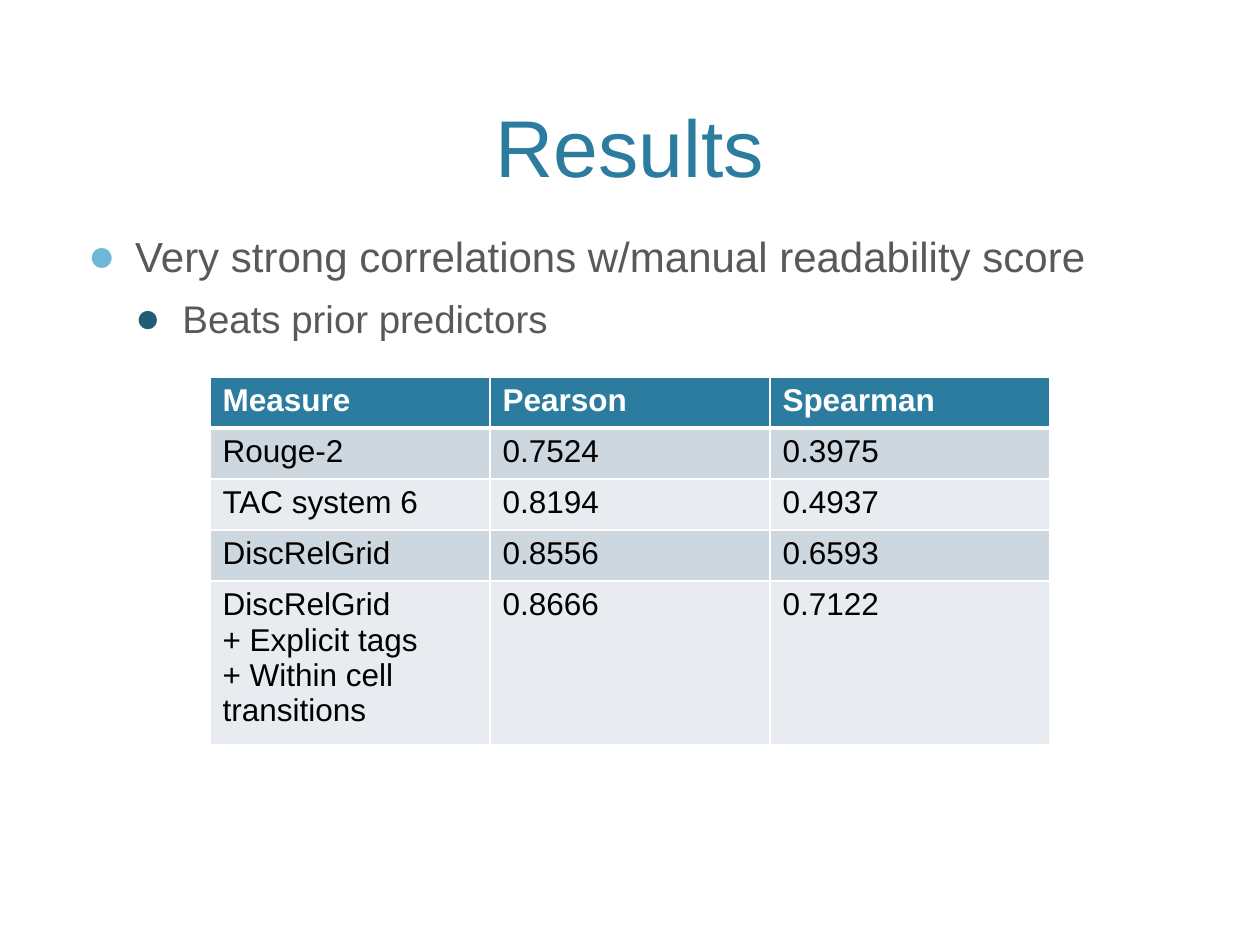
from dataclasses import dataclass

from lxml.etree import SubElement as Sub
from pptx import Presentation
from pptx.dml.color import RGBColor as Rgb
from pptx.enum.text import MSO_ANCHOR as Anchor, PP_ALIGN as Align
from pptx.oxml.ns import qn
from pptx.util import Inches, Pt


@dataclass(frozen=True)
class Theme:
    """Colours, font and type sizes of the slide."""
    font: str = "Arial"
    blue: str = "2C7C9F"
    gray: str = "595959"
    white: str = "FFFFFF"
    black: str = "000000"
    dots: tuple = ("6FB7D7", "215D77")
    bands: tuple = ("CDD7DF", "E8ECF0")
    title: int = 46
    body: tuple = (24, 22)
    cell: int = 18


T = Theme()
WIDE, HIGH = Inches(10), Inches(7.5)
ROWS = (
    ("Measure", "Pearson", "Spearman"),
    ("Rouge-2", "0.7524", "0.3975"),
    ("TAC system 6", "0.8194", "0.4937"),
    ("DiscRelGrid", "0.8556", "0.6593"),
    ("DiscRelGrid\n+ Explicit tags\n+ Within cell\ntransitions", "0.8666", "0.7122"),
)
POINTS = ("Very strong correlations w/manual readability score", "Beats prior predictors")


def area(left, top, width, height):
    """Turn shares of the slide into a box."""
    return [round(n) for n in (left * WIDE, top * HIGH, width * WIDE, height * HIGH)]


def write(para, text, size, color, bold=False, align=Align.LEFT, before=0, line=1.0):
    """Put formatted text into a paragraph."""
    para.alignment, para.space_before, para.line_spacing = align, Pt(before), line
    run = para.add_run()
    run.text = text
    font = run.font
    font.name, font.size, font.bold = T.font, Pt(size), bold
    font.color.rgb = Rgb.from_string(color)


def frame(slide, box, anchor):
    """Add a wrapping text box and return its frame."""
    text = slide.shapes.add_textbox(*box).text_frame
    text.word_wrap, text.vertical_anchor = True, anchor
    return text


def dot(para, color, left, hang):
    """Give a paragraph a hanging round bullet."""
    props = para._p.get_or_add_pPr()
    props.set("marL", str(Inches(left)))
    props.set("indent", str(-Inches(hang)))
    Sub(Sub(props, qn("a:buClr")), qn("a:srgbClr"), val=color)
    Sub(props, qn("a:buSzPct"), val="110000")
    Sub(props, qn("a:buFont"), typeface=T.font)
    Sub(props, qn("a:buChar"), char="●")


def edge(cell, sides):
    """Draw white cell borders of the given widths."""
    props = cell._tc.get_or_add_tcPr()
    for side, width in zip("LRTB", sides):
        line = Sub(props, qn(f"a:ln{side}"), w=str(Pt(width)))
        Sub(Sub(line, qn("a:solidFill")), qn("a:srgbClr"), val=T.white)


def head(slide, box, text):
    """Place the title at the foot of its box."""
    para = frame(slide, box, Anchor.BOTTOM).paragraphs[0]
    write(para, text, T.title, T.blue, align=Align.CENTER)


def points(slide, box, items):
    """Place the bullets, one level deeper each."""
    text = frame(slide, box, Anchor.TOP)
    for level, item in enumerate(items):
        para = text.add_paragraph() if level else text.paragraphs[0]
        para.level = level
        write(para, item, T.body[level], T.gray, before=(20, 6)[level], line=1.08)
        dot(para, T.dots[level], 0.375 * (level + 1), 0.375)


def grid(slide, box, rows):
    """Place the banded table with equal columns."""
    table = slide.shapes.add_table(len(rows), len(rows[0]), *box).table
    for r, row in enumerate(rows):
        top = r == 0
        fill = T.blue if top else T.bands[(r - 1) % 2]
        for c, words in enumerate(row):
            cell = table.cell(r, c)
            edge(cell, (1, 1, 3 if r == 1 else 1, 3 if top else 1))
            cell.fill.solid()
            cell.fill.fore_color.rgb = Rgb.from_string(fill)
            text = cell.text_frame
            for n, part in enumerate(words.split("\n")):
                para = text.add_paragraph() if n else text.paragraphs[0]
                write(para, part, T.cell, T.white if top else T.black, bold=top)


def main():
    """Build and save the results slide."""
    deck = Presentation()
    deck.slide_width, deck.slide_height = WIDE, HIGH
    slide = deck.slides.add_slide(deck.slide_layouts[6])
    head(slide, area(0.06, 0.016, 0.88, 0.195), "Results")
    points(slide, area(0.06, 0.233, 0.88, 0.633), POINTS)
    grid(slide, area(1 / 6, 0.399, 2 / 3, 0.27), ROWS)
    deck.save("out.pptx")


if __name__ == "__main__":
    main()
